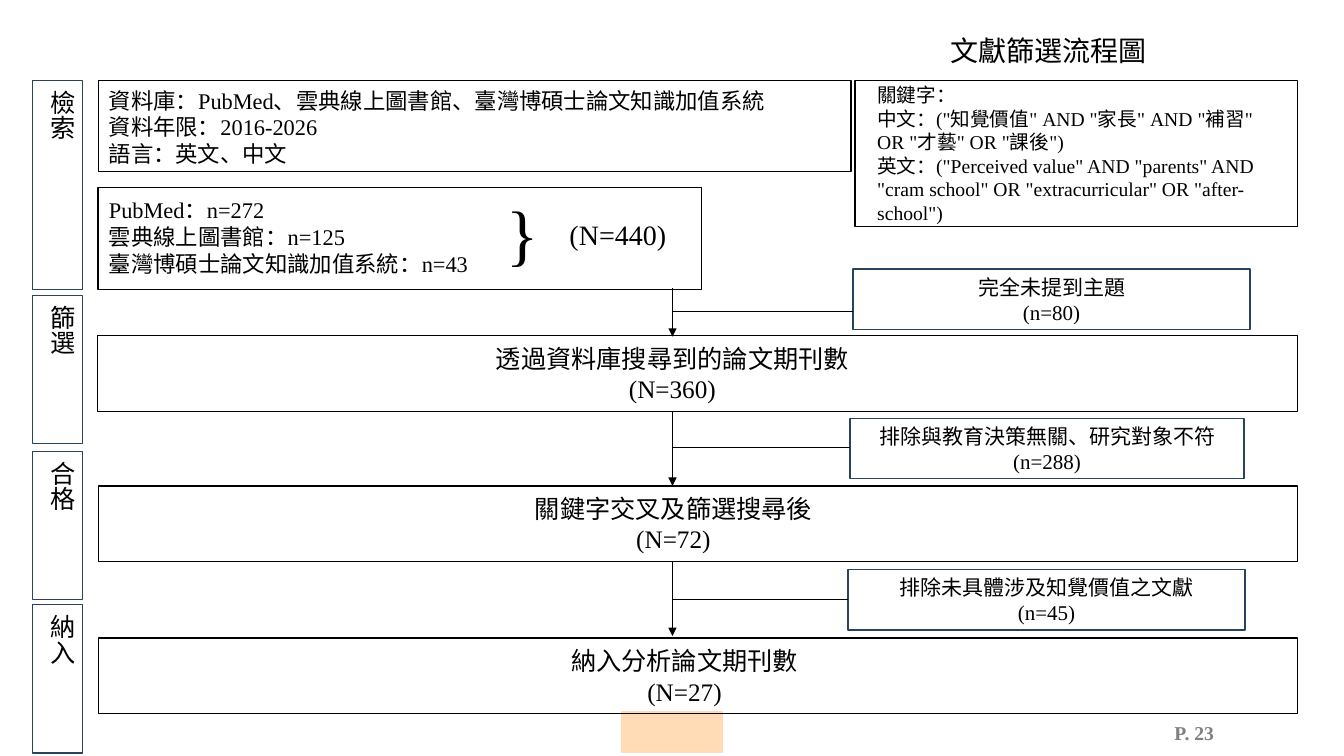
from dataclasses import dataclass

from lxml.etree import SubElement
from pptx import Presentation
from pptx.dml.color import RGBColor
from pptx.enum.shapes import MSO_CONNECTOR as Connector, MSO_SHAPE as Preset
from pptx.enum.text import MSO_ANCHOR as Anchor, MSO_AUTO_SIZE as AutoSize, PP_ALIGN as Align
from pptx.oxml.ns import qn
from pptx.util import Pt

PX = 9144  # EMU per px, 100 px to the inch
FONT = "Times New Roman"
COLORS = {"ink": "000000", "navy": "28445D", "peach": "FFDCB6", "gray": "808080"}
FLOW_X = 667  # the vertical arrows share this position


@dataclass(frozen=True)
class Box:
    left: int
    top: int
    width: int
    height: int
    text: str = ""
    size: int = 18
    align: Align = Align.CENTER
    anchor: Anchor = Anchor.MIDDLE
    insets: tuple[int, int, int, int] = (10, 5, 10, 5)  # left, top, right, bottom
    color: str = "ink"
    line: str | None = "ink"
    fill: str | None = None
    vertical: bool = False
    bold: bool = False


@dataclass(frozen=True)
class Step:
    arrow_top: int
    arrow_bottom: int
    branch_y: int
    excluded: Box
    remaining: Box


def color(name: str) -> RGBColor:
    return RGBColor.from_string(COLORS[name])


def write_text(frame, box: Box) -> None:
    frame.word_wrap = True
    frame.auto_size = AutoSize.NONE
    frame.vertical_anchor = box.anchor
    (frame.margin_left, frame.margin_top,
     frame.margin_right, frame.margin_bottom) = (inset * PX for inset in box.insets)
    frame.text = box.text
    for paragraph in frame.paragraphs:
        paragraph.alignment = box.align
        font = paragraph.font
        font.name, font.size, font.bold = FONT, Pt(box.size), box.bold
        font.color.rgb = color(box.color)


def draw_box(slide, box: Box) -> None:
    place = [n * PX for n in (box.left, box.top, box.width, box.height)]
    if box.line is None:
        write_text(slide.shapes.add_textbox(*place).text_frame, box)
        return
    shape = slide.shapes.add_shape(Preset.RECTANGLE, *place)
    shape.shadow.inherit = False
    if box.fill:
        shape.fill.solid()
        shape.fill.fore_color.rgb = color(box.fill)
    else:
        shape.fill.background()
    shape.line.color.rgb = color(box.line)
    shape.line.width = Pt(1)
    if box.text:
        write_text(shape.text_frame, box)
    if box.vertical:
        shape.text_frame._txBody.bodyPr.set("vert", "eaVert")


def draw_line(slide, x1: int, y1: int, x2: int, y2: int, arrow: bool = False) -> None:
    connector = slide.shapes.add_connector(
        Connector.STRAIGHT, x1 * PX, y1 * PX, x2 * PX, y2 * PX)
    connector.line.color.rgb = color("ink")
    connector.line.width = Pt(0.5)
    if arrow:
        SubElement(connector.line._get_or_add_ln(), qn("a:tailEnd"), type="triangle")
    SubElement(connector._element.spPr, qn("a:effectLst"))


def stage(top: int, height: int, text: str) -> Box:
    return Box(32, top, 50, height, text, anchor=Anchor.TOP, line="navy", vertical=True)


def excluded(left: int, top: int, width: int, text: str) -> Box:
    return Box(left, top, width, 60, text, 15, line="navy")


def remaining(left: int, top: int, text: str, right_inset: int) -> Box:
    return Box(left, top, 1287 - left, 75, text, insets=(10, 5, right_inset, 5))


TITLE = Box(895, 31, 290, 43, "文獻篩選流程圖", 20)
STAGES = [
    stage(80, 207, "檢索"),
    stage(293, 147, "篩選"),
    stage(448, 147, "合格"),
    stage(600, 147, "納入"),
]
SEARCH = [
    Box(98, 80, 746, 90,
        "資料庫：PubMed、雲典線上圖書館、臺灣博碩士論文知識加值系統\n"
        "資料年限：2016-2026\n語言：英文、中文",
        16, Align.LEFT, Anchor.TOP, (10, 6, 10, 0)),
    Box(848, 80, 439, 145,
        '關鍵字：\n中文：("知覺價值" AND "家長" AND "補習" OR "才藝" OR "課後")\n'
        '英文：("Perceived value" AND "parents" AND "cram school" OR '
        '"extracurricular" OR "after-school")',
        14, Align.LEFT, insets=(22, 0, 16, 0)),
    Box(97, 186, 599, 101,
        "PubMed：n=272\n雲典線上圖書館：n=125\n臺灣博碩士論文知識加值系統：n=43",
        16, Align.LEFT, Anchor.TOP, (11, 9, 10, 0)),
    Box(493, 185, 72, 91, "}", 48, Align.LEFT, Anchor.TOP, line=None),
    Box(555, 211, 124, 44, "(N=440)", 20, Align.LEFT, Anchor.TOP, line=None),
]
STEPS = [
    Step(286, 334, 309, excluded(846, 267, 394, "完全未提到主題\n(n=80)"),
         remaining(97, 333, "透過資料庫搜尋到的論文期刊數\n(N=360)", 60)),
    Step(409, 482, 444, excluded(843, 415, 391, "排除與教育決策無關、研究對象不符\n(n=288)"),
         remaining(98, 482, "關鍵字交叉及篩選搜尋後\n(N=72)", 59)),
    Step(558, 631, 595, excluded(841, 565, 394, "排除未具體涉及知覺價值之文獻\n(n=45)"),
         remaining(98, 633, "納入分析論文期刊數\n(N=27)", 37)),
]
PAGE_MARK = Box(617, 706, 99, 40, line="peach", fill="peach")
PAGE_NUMBER = Box(914, 707, 300, 40, "P. 23", 14, Align.RIGHT,
                  color="gray", line=None, bold=True)


def main() -> None:
    presentation = Presentation()
    presentation.slide_width, presentation.slide_height = 1333 * PX, 750 * PX
    slide = presentation.slides.add_slide(presentation.slide_layouts[5])

    # Title
    title = slide.shapes.title
    title.left, title.top = TITLE.left * PX, TITLE.top * PX
    title.width, title.height = TITLE.width * PX, TITLE.height * PX
    write_text(title.text_frame, TITLE)
    title.text_frame.paragraphs[0].line_spacing = 0.9

    # Page marker, stages and search details
    for box in [PAGE_MARK, PAGE_NUMBER, *STAGES, *SEARCH]:
        draw_box(slide, box)

    # Screening steps
    for step in STEPS:
        draw_box(slide, step.remaining)
        draw_box(slide, step.excluded)
        draw_line(slide, FLOW_X, step.arrow_top, FLOW_X, step.arrow_bottom, arrow=True)
        draw_line(slide, FLOW_X, step.branch_y, step.excluded.left, step.branch_y)

    presentation.save("out.pptx")


if __name__ == "__main__":
    main()
